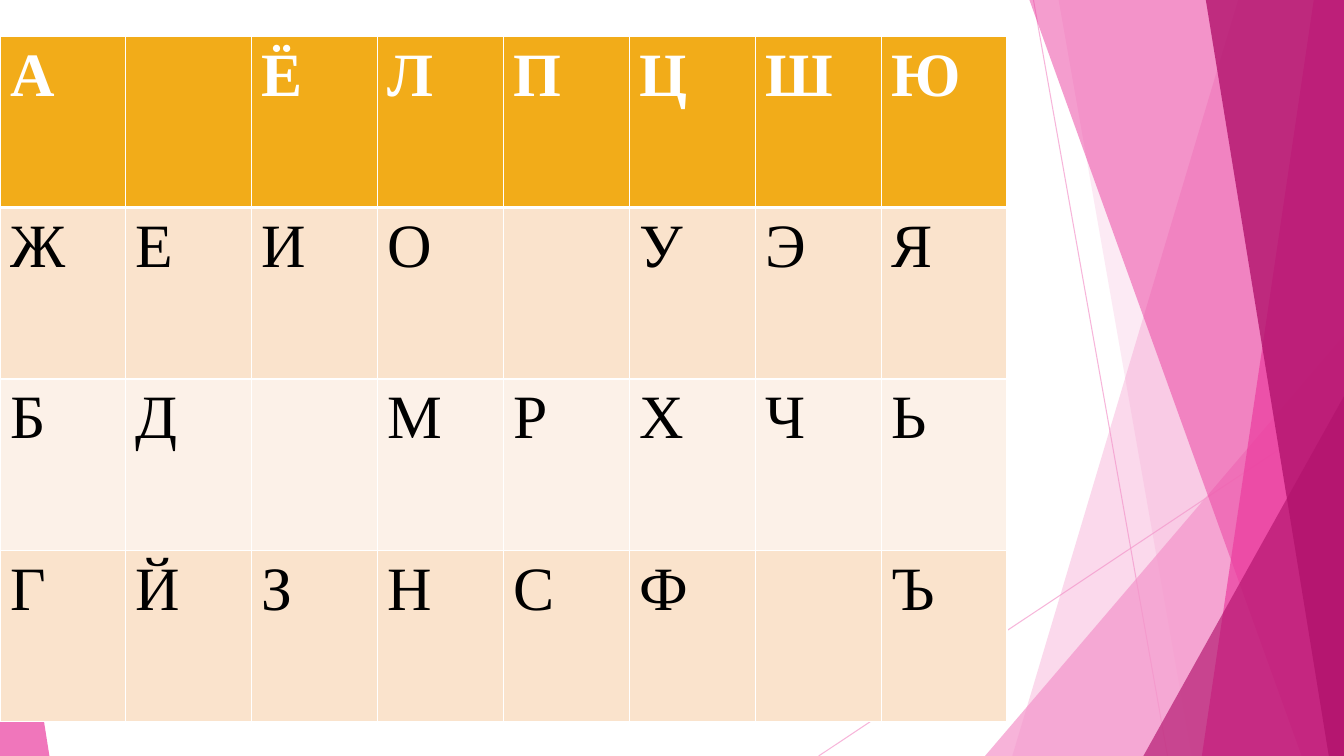
from lxml.etree import SubElement
from pptx import Presentation
from pptx.dml.color import RGBColor
from pptx.enum.shapes import MSO_CONNECTOR, MSO_SHAPE
from pptx.oxml.ns import qn
from pptx.util import Inches, Pt

W, H = 13.33, 7.5
PALE, PINK, DARK = "F496CB", "EB3D9F", "B2136D"
HEADER, BAND, LIGHT = "F2AC19", "FAE3CC", "FCF1E8"
COL, ROW = 9.99 / 8, 1.7
LETTERS = [
    ["А", "", "Ё", "Л", "П", "Ц", "Ш", "Ю"],
    ["Ж", "Е", "И", "О", "", "У", "Э", "Я"],
    ["Б", "Д", "", "М", "Р", "Х", "Ч", "Ь"],
    ["Г", "Й", "З", "Н", "С", "Ф", "", "Ъ"],
]


def rgb(color):
    return RGBColor.from_string(color)


def set_alpha(element, percent):
    """Make the colour inside a fill or line element partly transparent."""
    clr = next(element.iter(qn("a:srgbClr")))
    SubElement(clr, qn("a:alpha"), val=str(percent * 1000))


def paint(sp, color, alpha):
    sp.shadow.inherit = False
    sp.fill.solid()
    sp.fill.fore_color.rgb = rgb(color)
    set_alpha(sp.fill._xPr, alpha)
    sp.line.fill.background()


def add_ray(s, x1, y1, x2, y2):
    ray = s.shapes.add_connector(MSO_CONNECTOR.STRAIGHT,
                                 *map(Inches, (x1, y1, x2, y2)))
    ray.line.width = Pt(0.75)
    ray.line.color.rgb = rgb(PALE)
    set_alpha(ray.line._ln, 70)
    SubElement(ray._element.spPr, qn("a:effectLst"))


def add_facet(s, top_x, bottom_x, color, alpha):
    """Fill the area from a slanted left edge to the slide's right side."""
    corners = [(top_x, 0), (W, 0), (W, H), (bottom_x, H)]
    points = [(Inches(x), Inches(y)) for x, y in corners]
    fb = s.shapes.build_freeform(*points[0])
    fb.add_line_segments(points[1:], close=True)
    paint(fb.convert_to_shape(), color, alpha)


def add_corner(s, left, width, height, apex, color, alpha):
    """Stand a right triangle on the bottom edge; apex 0 is left, 1 right."""
    sp = s.shapes.add_shape(MSO_SHAPE.ISOSCELES_TRIANGLE, Inches(left),
                            Inches(H - height), Inches(width), Inches(height))
    sp.adjustments[0] = apex
    paint(sp, color, alpha)


def add_borders(cell, widths):
    tcPr = cell._tc.get_or_add_tcPr()
    for side, width in zip("LRTB", widths):
        ln = SubElement(tcPr, qn(f"a:ln{side}"), w=str(Pt(width)))
        fill = SubElement(ln, qn("a:solidFill"))
        SubElement(fill, qn("a:srgbClr"), val="FFFFFF")


def format_cell(cell, letter, row):
    add_borders(cell, (1, 1, 3 if row == 1 else 1, 3 if row == 0 else 1))
    cell.fill.solid()
    cell.fill.fore_color.rgb = rgb((HEADER, BAND, LIGHT, BAND)[row])
    if letter:
        r = cell.text_frame.paragraphs[0].add_run()
        r.text = letter
        for name, value in {"name": "Times New Roman", "size": Pt(44),
                            "bold": row == 0}.items():
            setattr(r.font, name, value)
        r.font.color.rgb = rgb("000000" if row else "FFFFFF")


def add_alphabet(s):
    rows, cols = len(LETTERS), len(LETTERS[0])
    table = s.shapes.add_table(rows, cols, 0, Inches(0.36), Inches(cols * COL),
                               Inches(rows * ROW)).table
    for i, letters in enumerate(LETTERS):
        for j, letter in enumerate(letters):
            format_cell(table.cell(i, j), letter, i)


def main():
    prs = Presentation()
    prs.slide_width, prs.slide_height = Inches(W), Inches(H)
    s = prs.slides.add_slide(prs.slide_layouts[6])
    add_ray(s, 10.25, 0, 11.58, H)
    add_ray(s, W, 4.03, 8.12, H)
    add_facet(s, 12.28, 10.04, PALE, 36)
    add_facet(s, 10.5, 11.82, PALE, 20)
    add_corner(s, 9.77, 3.56, 4.17, 1, PALE, 72)
    add_facet(s, 10.21, 12.91, PINK, 50)
    add_facet(s, 13.03, 11.92, PINK, 70)
    add_facet(s, 11.96, 13.18, DARK, 80)
    add_corner(s, 11.34, 1.99, 3.57, 1, DARK, 66)
    add_corner(s, 0, 0.49, 3.11, 0, PINK, 70)
    add_alphabet(s)
    prs.save("out.pptx")


if __name__ == "__main__":
    main()
